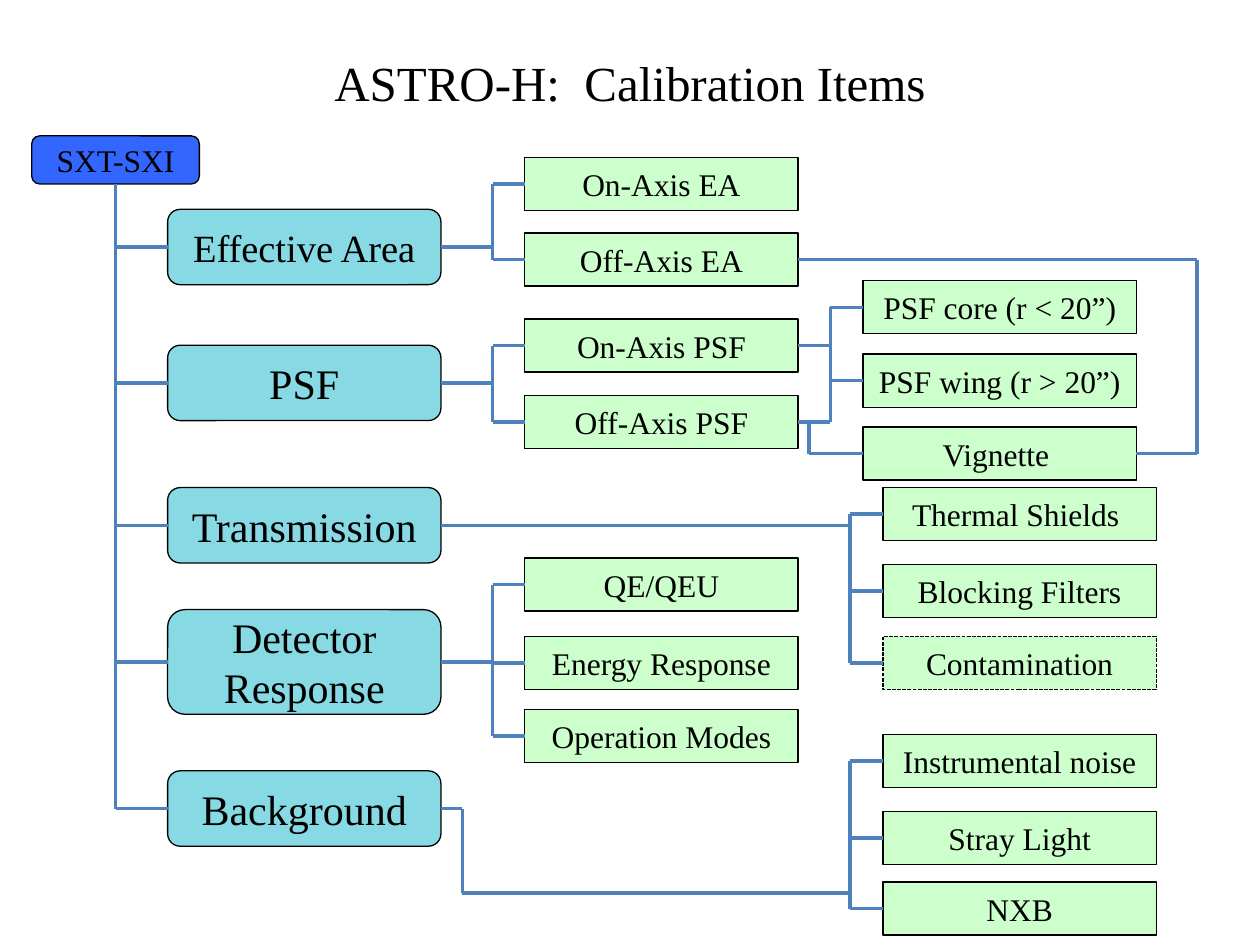
"""Build the ASTRO-H calibration items tree as one slide."""
from lxml.etree import SubElement
from pptx import Presentation
from pptx.dml.color import RGBColor
from pptx.enum.dml import MSO_LINE
from pptx.enum.shapes import MSO_CONNECTOR, MSO_SHAPE
from pptx.enum.text import MSO_ANCHOR, PP_ALIGN
from pptx.oxml.ns import qn
from pptx.util import Cm, Pt

rgb = RGBColor.from_string
BLACK, BLUE, TEAL, GREEN, WIRE = map(rgb, ["000000", "3366FF", "87D9E3", "CCFFCC", "4F81BD"])

deck = Presentation()
deck.slide_width, deck.slide_height = Cm(25.4), Cm(19.05)
slide = deck.slides.add_slide(deck.slide_layouts[5])
boxes, middle = {}, {}


def add_box(name, left, top, width, height, fill, size, preset):
    box = slide.shapes.add_shape(preset, Cm(left), Cm(top), Cm(width), Cm(height))
    box.shadow.inherit = False
    box.fill.solid()
    box.fill.fore_color.rgb = fill
    box.line.color.rgb = BLACK
    box.line.width = Pt(0.75)
    frame = box.text_frame
    frame.text = name
    frame.word_wrap = True
    frame.vertical_anchor = MSO_ANCHOR.MIDDLE
    paragraph = frame.paragraphs[0]
    paragraph.alignment = PP_ALIGN.CENTER
    paragraph.font.color.rgb = BLACK
    for attribute, value in {"name": "Times New Roman", "size": Pt(size)}.items():
        setattr(paragraph.font, attribute, value)
    boxes[name] = box
    middle[name] = box.top + box.height // 2
    return box


def add_wire(x1, y1, x2, y2, source=None, target=None):
    wire = slide.shapes.add_connector(MSO_CONNECTOR.STRAIGHT, x1, y1, x2, y2)
    wire.line.color.rgb = WIRE
    wire.line.width = Pt(2)
    SubElement(wire._element.spPr, qn("a:effectLst"))
    if source:
        wire.begin_connect(boxes[source], 3)
    if target:
        wire.end_connect(boxes[target], 1)
    return wire


title = slide.shapes.title
title_place = {"left": Cm(1.27), "top": Cm(0.76), "width": Cm(22.86), "height": Cm(1.78)}
for attribute, value in title_place.items():
    setattr(title, attribute, value)
title.text_frame.text = "ASTRO-H:  Calibration Items"
title.text_frame.vertical_anchor = MSO_ANCHOR.MIDDLE
heading = title.text_frame.paragraphs[0]
heading.alignment = PP_ALIGN.CENTER
heading.font.color.rgb = BLACK
for attribute, value in {"name": "Times New Roman", "size": Pt(28)}.items():
    setattr(heading.font, attribute, value)

instrument = add_box("SXT-SXI", 0.64, 2.74, 3.38, 0.97, BLUE, 18,
                     MSO_SHAPE.FLOWCHART_ALTERNATE_PROCESS)

topics = [
    ("Effective Area", 4.22, 1.52, 22),
    ("PSF", 6.96, 1.52, 24),
    ("Transmission", 9.83, 1.52, 24),
    ("Detector Response", 12.29, 2.11, 24),
    ("Background", 15.54, 1.52, 24),
]
for name, top, height, size in topics:
    add_box(name, 3.38, top, 5.51, height, TEAL, size, MSO_SHAPE.FLOWCHART_ALTERNATE_PROCESS)

item_columns = {
    10.58: [("On-Axis EA", 3.17), ("Off-Axis EA", 4.7), ("On-Axis PSF", 6.43),
            ("Off-Axis PSF", 7.97), ("QE/QEU", 11.25), ("Energy Response", 12.83),
            ("Operation Modes", 14.3)],
    17.4: [("PSF core (r < 20”)", 5.66), ("PSF wing (r > 20”)", 7.14), ("Vignette ", 8.61)],
    17.8: [("Thermal Shields ", 9.83), ("Blocking Filters", 11.38), ("Contamination", 12.83),
           ("Instrumental noise", 14.81), ("Stray Light", 16.36), ("NXB", 17.78)],
}
for left, items in item_columns.items():
    for name, top in items:
        add_box(name, left, top, 5.51, 1.07, GREEN, 18, MSO_SHAPE.RECTANGLE)
boxes["Contamination"].line.dash_style = MSO_LINE.SQUARE_DOT

trunk = instrument.left + instrument.width // 2
trunk_wire = add_wire(trunk, instrument.top + instrument.height, trunk, middle["Background"])
trunk_wire.begin_connect(instrument, 2)
for name, *_ in topics:
    add_wire(trunk, middle[name], boxes[name].left, middle[name], target=name)

branches = [
    (9.93, ["Effective Area"], ["On-Axis EA", "Off-Axis EA"]),
    (9.93, ["PSF"], ["On-Axis PSF", "Off-Axis PSF"]),
    (9.93, ["Detector Response"], ["QE/QEU", "Energy Response", "Operation Modes"]),
    (16.74, ["On-Axis PSF", "Off-Axis PSF"], ["PSF core (r < 20”)", "PSF wing (r > 20”)"]),
    (17.14, ["Transmission"], ["Thermal Shields ", "Blocking Filters", "Contamination"]),
    (17.14, [], ["Instrumental noise", "Stray Light", "NXB"]),
]
for bar, parents, children in branches:
    levels = [middle[name] for name in parents + children]
    add_wire(Cm(bar), min(levels), Cm(bar), max(levels))
    for name in parents:
        parent = boxes[name]
        add_wire(parent.left + parent.width, middle[name], Cm(bar), middle[name], source=name)
    for name in children:
        add_wire(Cm(bar), middle[name], boxes[name].left, middle[name], target=name)

background, vignette, off_axis = (boxes[n] for n in ("Background", "Vignette ", "Off-Axis EA"))
step, floor = Cm(9.32), Cm(18)
add_wire(background.left + background.width, middle["Background"], step, middle["Background"],
         source="Background")
add_wire(step, middle["Background"], step, floor)
add_wire(step, floor, Cm(17.14), floor)

drop = Cm(16.31)
add_wire(drop, middle["Off-Axis PSF"], drop, middle["Vignette "])
add_wire(drop, middle["Vignette "], vignette.left, middle["Vignette "], target="Vignette ")

loop = Cm(24.13)
for name, box in (("Off-Axis EA", off_axis), ("Vignette ", vignette)):
    add_wire(box.left + box.width, middle[name], loop, middle[name], source=name)
add_wire(loop, middle["Off-Axis EA"], loop, middle["Vignette "])

deck.save("out.pptx")
